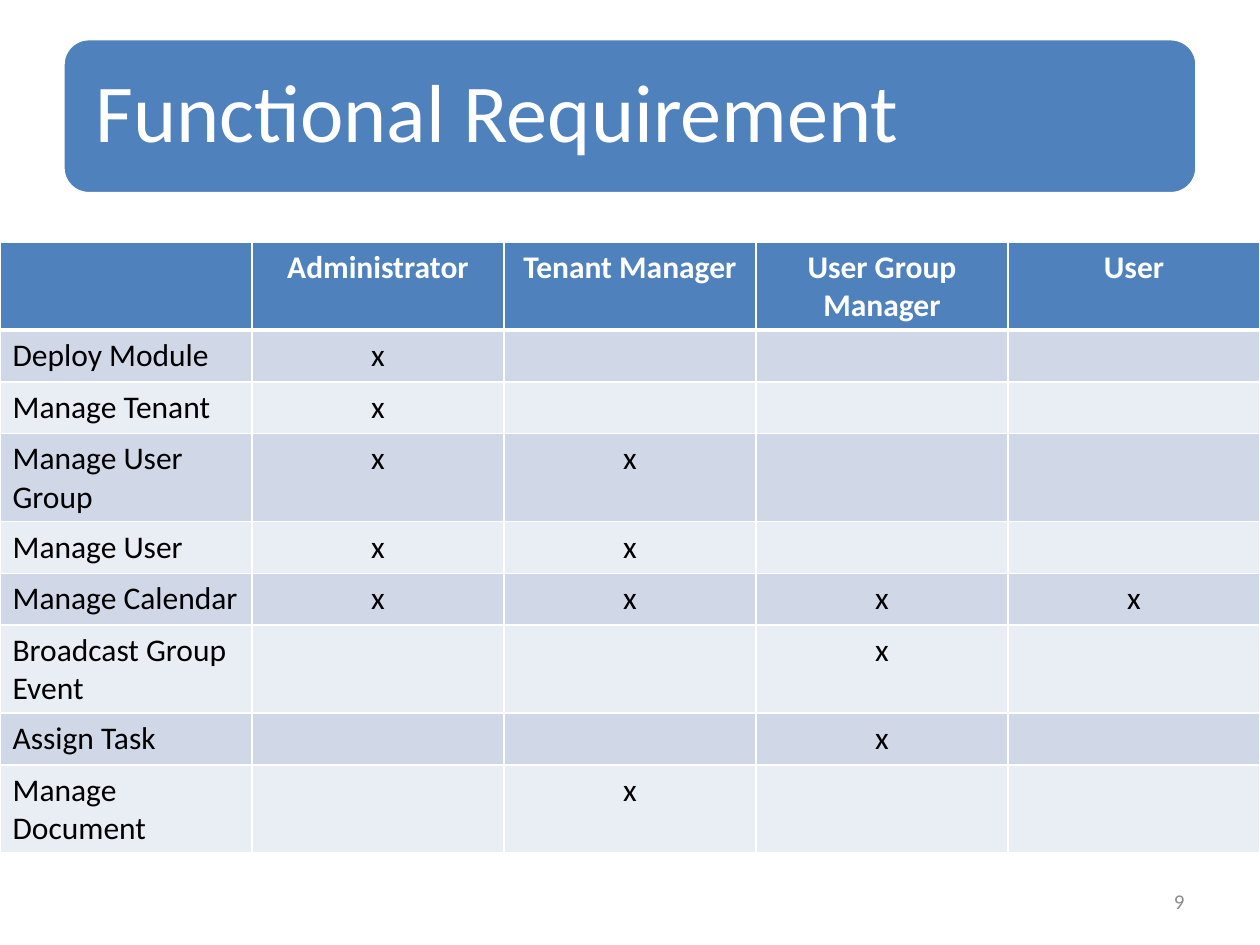
import pptx
import pptx.dml.color
import pptx.enum.shapes
import pptx.enum.text
import pptx.oxml
import pptx.oxml.ns
import pptx.util

WIDTH, HEIGHT = pptx.util.Inches(10), pptx.util.Inches(7.5)
ALIGN = pptx.enum.text.PP_ALIGN
MIDDLE = pptx.enum.text.MSO_ANCHOR.MIDDLE
BLUE, WHITE, BLACK, GREY = "4F81BD", "FFFFFF", "000000", "8C8C8C"
BANDS = ("D0D8E8", "E9EDF4")
ROLES = ("Administrator", "Tenant Manager", "User Group Manager", "User")
PERMISSIONS = {
    "Deploy Module": ("Administrator",),
    "Manage Tenant": ("Administrator",),
    "Manage User Group": ("Administrator", "Tenant Manager"),
    "Manage User": ("Administrator", "Tenant Manager"),
    "Manage Calendar": ROLES,
    "Broadcast Group Event": ("User Group Manager",),
    "Assign Task": ("User Group Manager",),
    "Manage Document": ("Tenant Manager",),
}


def rgb(code):
    """Turn a hex string into a colour."""
    return pptx.dml.color.RGBColor.from_string(code)


def box(left, top, width, height):
    """Turn shares of the slide's size into a position and a size."""
    return [round(share * side) for share, side in
            zip((left, top, width, height), (WIDTH, HEIGHT) * 2)]


def apply(target, values):
    """Set every attribute named in a dict of format values."""
    for name, value in values.items():
        setattr(target, name, value)


def write(frame, words, size, colour, align=ALIGN.LEFT, bold=False, spacing=1.0):
    """Put one formatted paragraph into a text frame."""
    frame.text = words
    line = frame.paragraphs[0]
    apply(line, {"alignment": align, "line_spacing": spacing})
    apply(line.runs[0].font if line.runs else line.font,
          {"name": "Calibri", "size": pptx.util.Pt(size), "bold": bold})
    (line.runs[0].font if line.runs else line.font).color.rgb = rgb(colour)


def add_heading(slide, words):
    """Lay the title over a rounded banner."""
    banner = slide.shapes.add_shape(
        pptx.enum.shapes.MSO_SHAPE.ROUNDED_RECTANGLE, *box(0.05, 0.041, 0.9, 0.164))
    banner.shadow.inherit = False
    banner.fill.solid()
    banner.fill.fore_color.rgb = rgb(BLUE)
    banner.line.color.rgb = rgb(WHITE)
    banner.line.width = pptx.util.Pt(2)
    heading = slide.shapes.title
    apply(heading, dict(zip(("left", "top", "width", "height"),
                            box(0.056, 0.049, 0.888, 0.148))))
    inset = pptx.util.Inches(0.2)
    apply(heading.text_frame, {
        "margin_left": inset, "margin_right": inset,
        "margin_top": inset, "margin_bottom": inset,
        "vertical_anchor": MIDDLE, "word_wrap": True,
        "auto_size": pptx.enum.text.MSO_AUTO_SIZE.NONE})
    write(heading.text_frame, words, 47, WHITE, spacing=0.9)
    banner._element.addnext(heading._element)


def add_borders(cell, bottom):
    """Draw white cell borders, with the bottom one in its own weight."""
    properties = cell._tc.get_or_add_tcPr()
    for place, (side, weight) in enumerate(zip("LRTB", (1, 1, 1, bottom))):
        properties.insert(place, pptx.oxml.parse_xml(
            f'<a:ln{side} {pptx.oxml.ns.nsdecls("a")} w="{pptx.util.Pt(weight)}">'
            f'<a:solidFill><a:srgbClr val="{WHITE}"/></a:solidFill></a:ln{side}>'))


def fill_row(cells, words, fill, colour, bold, bottom):
    """Write one table row, with every column but the first centred."""
    for column, (cell, word) in enumerate(zip(cells, words)):
        cell.fill.solid()
        cell.fill.fore_color.rgb = rgb(fill)
        add_borders(cell, bottom)
        write(cell.text_frame, word, 18, colour,
              ALIGN.CENTER if column else ALIGN.LEFT, bold)


def add_permissions(slide):
    """Build the table of tasks against roles."""
    count = len(PERMISSIONS) + 1
    matrix = slide.shapes.add_table(
        count, len(ROLES) + 1, *box(0, 0.256, 1, count * 0.41 / 7.5)).table
    header, *tasks = matrix.rows
    fill_row(header.cells, ("", *ROLES), BLUE, WHITE, True, 3)
    for index, (row, (task, allowed)) in enumerate(zip(tasks, PERMISSIONS.items())):
        marks = ["x" if role in allowed else "" for role in ROLES]
        fill_row(row.cells, (task, *marks), BANDS[index % 2], BLACK, False, 1)


def add_page_number(slide, number):
    """Write the page number at the lower right."""
    frame = slide.shapes.add_textbox(*box(0.717, 0.927, 0.233, 0.053)).text_frame
    apply(frame, {"word_wrap": True, "vertical_anchor": MIDDLE})
    write(frame, number, 12, GREY, ALIGN.RIGHT)


def main():
    """Build the slide and save it."""
    deck = pptx.Presentation()
    apply(deck, {"slide_width": WIDTH, "slide_height": HEIGHT})
    slide = deck.slides.add_slide(deck.slide_layouts.get_by_name("Title Only"))
    add_heading(slide, "Functional Requirement")
    add_page_number(slide, "9")
    add_permissions(slide)
    deck.save("out.pptx")


if __name__ == "__main__":
    main()
